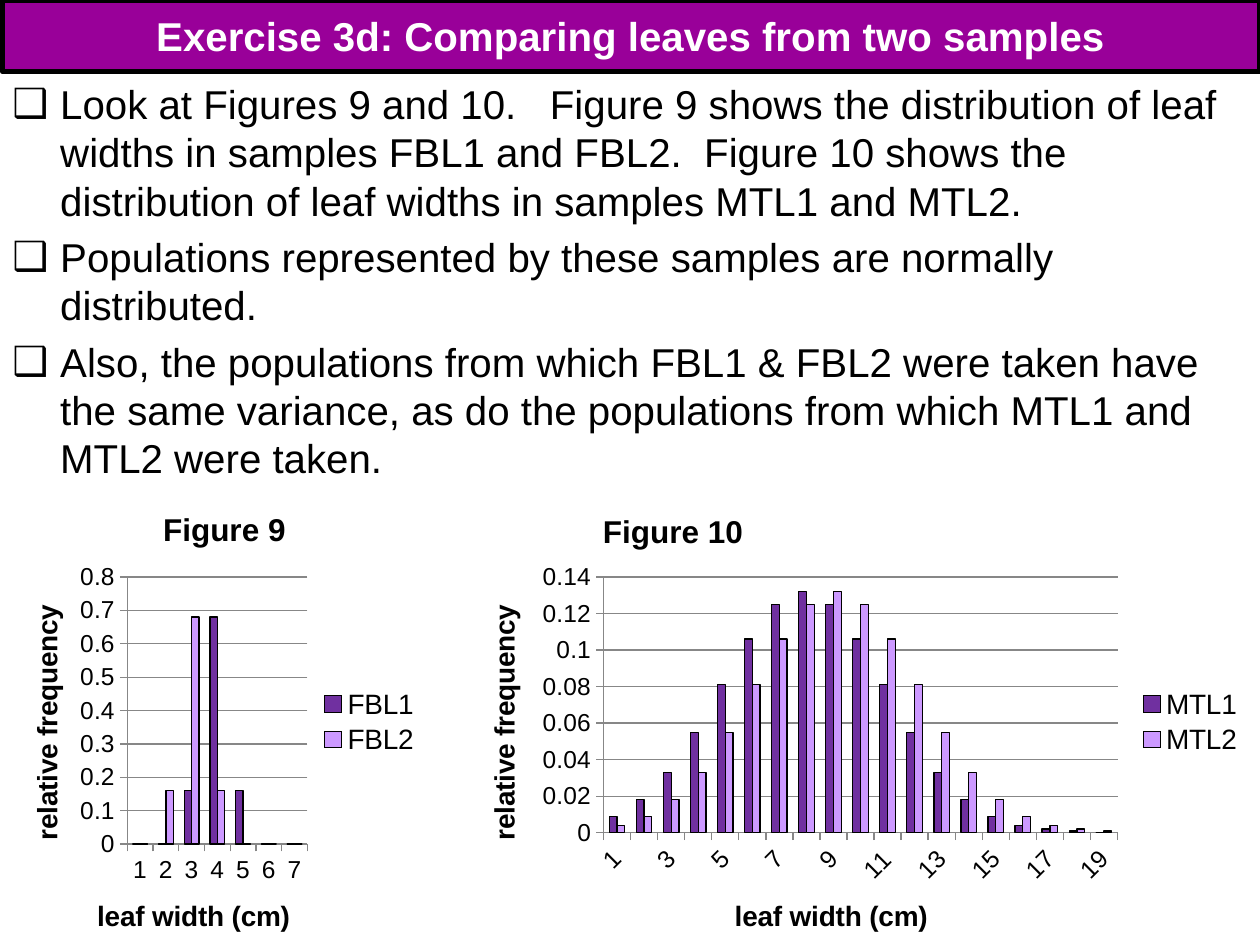
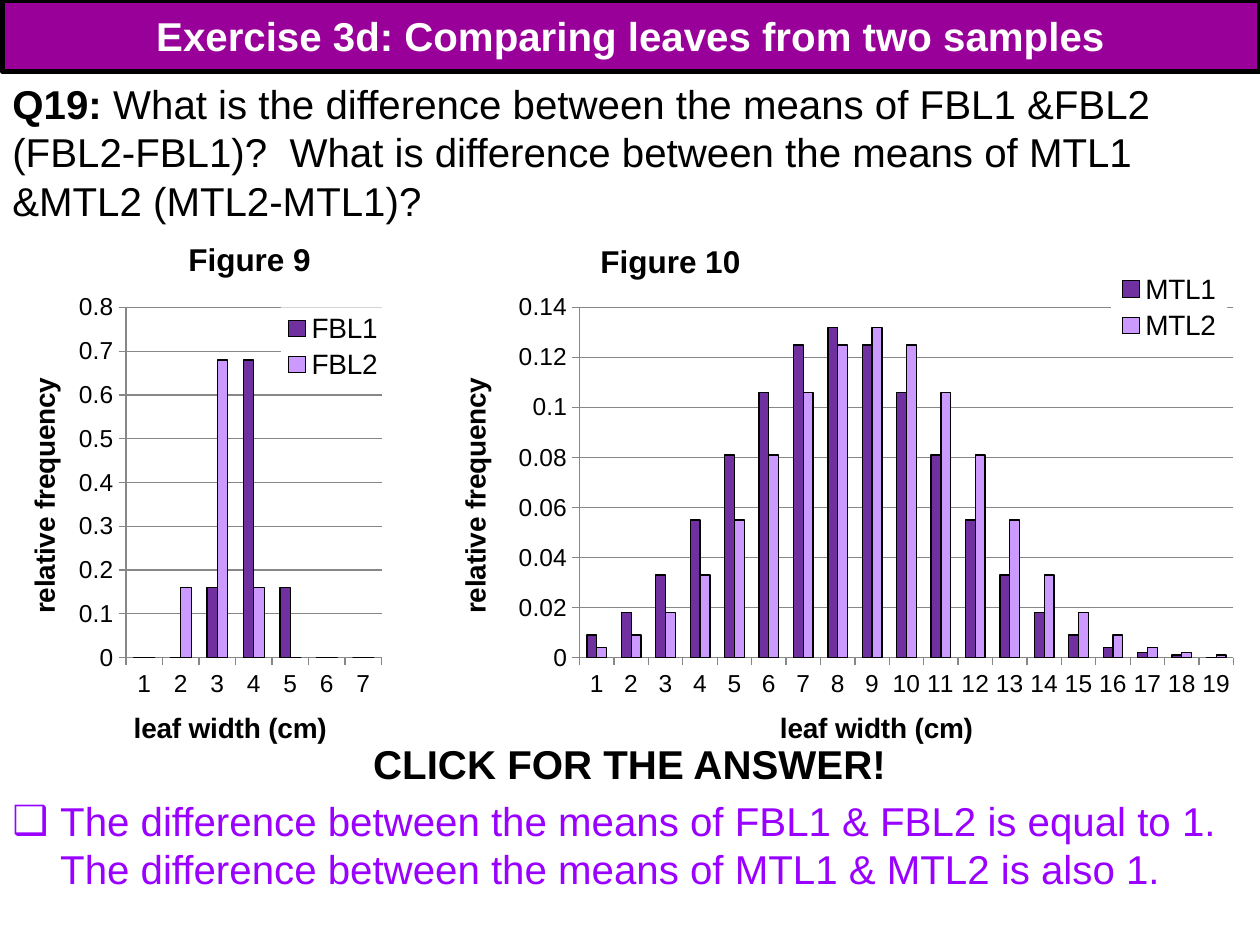
from dataclasses import dataclass
from typing import Optional

import lxml.etree
import pptx
import pptx.chart.data
import pptx.dml.color
import pptx.enum.chart
import pptx.enum.text
import pptx.oxml.ns
import pptx.util
from pptx.util import Inches

FONT = "Arial"
BLACK = "000000"
WHITE = "FFFFFF"
BAND = "990099"
ANSWER = "9900FF"
GRID = "878787"
SERIES_COLOURS = ("7030A0", "CC99FF")
TITLE = "Exercise 3d: Comparing leaves from two samples"
BODY_SIZE = 23
LINE_PITCH = 27.6
PARAGRAPH_GAP = 4.6
BULLET_INDENT = 0.38

FBL1 = [0, 0, 0.16, 0.68, 0.16, 0, 0]
MTL1 = [0.009, 0.018, 0.033, 0.055, 0.081, 0.106, 0.125, 0.132, 0.125, 0.106,
        0.081, 0.055, 0.033, 0.018, 0.009, 0.004, 0.002, 0.001, 0]


@dataclass(frozen=True)
class Box:
    left: float
    top: float
    width: float = 0
    height: float = 0


@dataclass(frozen=True)
class Distribution:
    title: str
    series: dict[str, list[float]]
    maximum: float
    step: float


@dataclass(frozen=True)
class Figure:
    distribution: Distribution
    frame: Box
    plot: Box
    title: Box
    width_title: Box
    frequency_title: Box
    legend: Box
    label_skip: int = 1
    label_angle: int = 0


@dataclass(frozen=True)
class Run:
    text: str
    bold: bool = False
    colour: str = BLACK


@dataclass(frozen=True)
class Paragraph:
    runs: tuple[Run, ...]
    bullet: bool = False
    centred: bool = False


FIGURE_9 = Distribution("Figure 9", {"FBL1": FBL1, "FBL2": FBL1[1:] + [0]}, 0.8, 0.1)
FIGURE_10 = Distribution("Figure 10", {"MTL1": MTL1, "MTL2": [0.004] + MTL1[:-1]}, 0.14, 0.02)

INTRODUCTION_FIGURES = (
    Figure(FIGURE_9, Box(0.02, 3.83, 3.42, 3.8), Box(1.01, 4.58, 1.43, 2.12),
           Box(1.25, 3.99), Box(0.73, 7.09), Box(0.19, 4.76), Box(2.53, 5.43, 0.8, 0.6)),
    Figure(FIGURE_10, Box(3.64, 3.83, 6.33, 3.8), Box(4.79, 4.58, 4.08, 2.03),
           Box(4.74, 4.01), Box(5.79, 7.09), Box(3.82, 4.76), Box(9.02, 5.43, 0.85, 0.6),
           label_skip=2, label_angle=-45),
)
QUESTION_FIGURES = (
    Figure(FIGURE_9, Box(-0.01, 1.67, 4.05, 4.5), Box(1, 2.44, 2.03, 2.78),
           Box(1.45, 1.85), Box(1.02, 5.6), Box(0.17, 2.96), Box(2.23, 2.44, 0.83, 0.62)),
    Figure(FIGURE_10, Box(3.41, 1.67, 7.5, 4.5), Box(4.6, 2.44, 5.19, 2.78),
           Box(4.72, 1.87), Box(6.15, 5.6), Box(3.59, 2.96), Box(8.82, 2.13, 0.92, 0.62)),
)

INTRODUCTION = tuple(Paragraph((Run(text),), bullet=True) for text in (
    "Look at Figures 9 and 10.   Figure 9 shows the distribution of leaf widths in samples "
    "FBL1 and FBL2.  Figure 10 shows the distribution of leaf widths in samples MTL1 and MTL2.",
    "Populations represented by these samples are normally distributed.",
    "Also, the populations from which FBL1 & FBL2 were taken have the same variance, "
    "as do the populations from which MTL1 and MTL2 were taken.",
))
QUESTION = (Paragraph((
    Run("Q19:", bold=True),
    Run(" What is the difference between the means of FBL1 &FBL2 (FBL2-FBL1)?  "
        "What is difference between the means of MTL1 &MTL2 (MTL2-MTL1)?"),
)),)
REPLY = (
    Paragraph((Run("CLICK FOR THE ANSWER!", bold=True),), centred=True),
    Paragraph((Run("The difference between the means of FBL1 & FBL2 is equal to 1.  "
                   "The difference between the means of MTL1 & MTL2 is also 1.",
                   colour=ANSWER),), bullet=True),
)


def colour_of(value: str) -> pptx.dml.color.RGBColor:
    return pptx.dml.color.RGBColor.from_string(value)


def style_font(font, size: float, bold: bool = False, colour: str = BLACK) -> None:
    font.name = FONT
    font.size = pptx.util.Pt(size)
    font.bold = bold
    font.color.rgb = colour_of(colour)


def style_line(line, colour: str, width: float) -> None:
    line.color.rgb = colour_of(colour)
    line.width = pptx.util.Pt(width)


def add_child(parent, tag: str, **attributes: str):
    return lxml.etree.SubElement(parent, pptx.oxml.ns.qn(tag), **attributes)


def add_title(slide) -> None:
    title = slide.shapes.title
    title.left, title.top = Inches(0.02), Inches(0)
    title.width, title.height = Inches(9.98), Inches(0.57)
    title.fill.solid()
    title.fill.fore_color.rgb = colour_of(BAND)
    style_line(title.line, BLACK, 3)
    title.text_frame.vertical_anchor = pptx.enum.text.MSO_ANCHOR.MIDDLE
    paragraph = title.text_frame.paragraphs[0]
    paragraph.alignment = pptx.enum.text.PP_ALIGN.CENTER
    run = paragraph.add_run()
    run.text = TITLE
    style_font(run.font, BODY_SIZE, True, WHITE)


def add_text(slide, box: Box, contents: tuple[Paragraph, ...]) -> None:
    shape = slide.shapes.add_textbox(
        Inches(box.left), Inches(box.top), Inches(box.width), Inches(box.height))
    frame = shape.text_frame
    frame.word_wrap = True
    for index, content in enumerate(contents):
        paragraph = frame.add_paragraph() if index else frame.paragraphs[0]
        paragraph.line_spacing = pptx.util.Pt(LINE_PITCH)
        if index:
            paragraph.space_before = pptx.util.Pt(PARAGRAPH_GAP)
        if content.centred:
            paragraph.alignment = pptx.enum.text.PP_ALIGN.CENTER
        if content.bullet:
            properties = paragraph._p.get_or_add_pPr()
            properties.set("marL", str(Inches(BULLET_INDENT)))
            properties.set("indent", str(-Inches(BULLET_INDENT)))
            add_child(properties, "a:buFont", typeface=FONT)
            add_child(properties, "a:buChar", char="❑")
        for part in content.runs:
            run = paragraph.add_run()
            run.text = part.text
            style_font(run.font, BODY_SIZE, part.bold, part.colour)


def place_part(element, box: Box, frame: Box, inner: bool = False) -> None:
    for previous in element.findall(pptx.oxml.ns.qn("c:layout")):
        element.remove(previous)
    layout = lxml.etree.Element(pptx.oxml.ns.qn("c:layout"))
    manual = add_child(layout, "c:manualLayout")
    if inner:
        add_child(manual, "c:layoutTarget", val="inner")
    add_child(manual, "c:xMode", val="edge")
    add_child(manual, "c:yMode", val="edge")
    add_child(manual, "c:x", val=f"{(box.left - frame.left) / frame.width:.4f}")
    add_child(manual, "c:y", val=f"{(box.top - frame.top) / frame.height:.4f}")
    if box.width:
        add_child(manual, "c:w", val=f"{box.width / frame.width:.4f}")
        add_child(manual, "c:h", val=f"{box.height / frame.height:.4f}")
    overlay = element.find(pptx.oxml.ns.qn("c:overlay"))
    if inner:
        element.insert(0, layout)
    elif overlay is None:
        element.append(layout)
    else:
        overlay.addprevious(layout)


def add_chart_title(title, text: str, size: float, box: Box, frame: Box) -> None:
    run = title.text_frame.paragraphs[0].add_run()
    run.text = text
    style_font(run.font, size, True)
    place_part(title._element, box, frame)


def style_axis(axis, text: str, box: Box, frame: Box) -> None:
    axis.has_title = True
    add_chart_title(axis.axis_title, text, 16, box, frame)
    axis.major_tick_mark = pptx.enum.chart.XL_TICK_MARK.OUTSIDE
    axis.minor_tick_mark = pptx.enum.chart.XL_TICK_MARK.NONE
    style_font(axis.tick_labels.font, 14)
    style_line(axis.format.line, GRID, 0.75)


def add_legend(chart, box: Box, frame: Box) -> None:
    chart.has_legend = True
    legend = chart.legend
    legend.position = pptx.enum.chart.XL_LEGEND_POSITION.RIGHT
    legend.include_in_layout = False
    style_font(legend.font, 16)
    place_part(legend._element, box, frame)
    properties = lxml.etree.Element(pptx.oxml.ns.qn("c:spPr"))
    fill = add_child(properties, "a:solidFill")
    add_child(fill, "a:srgbClr", val=WHITE)
    legend._element.find(pptx.oxml.ns.qn("c:overlay")).addnext(properties)


def add_figure(slide, figure: Figure) -> None:
    distribution, frame = figure.distribution, figure.frame
    data = pptx.chart.data.CategoryChartData(number_format="General")
    count = len(next(iter(distribution.series.values())))
    data.categories = [str(width) for width in range(1, count + 1)]
    for name, values in distribution.series.items():
        data.add_series(name, values)
    chart = slide.shapes.add_chart(
        pptx.enum.chart.XL_CHART_TYPE.COLUMN_CLUSTERED, Inches(frame.left), Inches(frame.top),
        Inches(frame.width), Inches(frame.height), data).chart
    style_font(chart.font, 10)

    background = lxml.etree.Element(pptx.oxml.ns.qn("c:spPr"))
    add_child(background, "a:noFill")
    add_child(add_child(background, "a:ln"), "a:noFill")
    chart_element = chart._chartSpace.find(pptx.oxml.ns.qn("c:chart"))
    chart_element.addnext(background)

    chart.has_title = True
    add_chart_title(chart.chart_title, distribution.title, 18, figure.title, frame)
    place_part(chart_element.find(pptx.oxml.ns.qn("c:plotArea")), figure.plot, frame, inner=True)
    add_legend(chart, figure.legend, frame)

    widths, frequencies = chart.category_axis, chart.value_axis
    style_axis(widths, "leaf width (cm)", figure.width_title, frame)
    style_axis(frequencies, "relative frequency", figure.frequency_title, frame)
    frequencies.minimum_scale = 0
    frequencies.maximum_scale = distribution.maximum
    frequencies.major_unit = distribution.step
    frequencies.has_major_gridlines = True
    style_line(frequencies.major_gridlines.format.line, GRID, 0.75)
    label_body = widths._element.find(pptx.oxml.ns.qn("c:txPr")).find(pptx.oxml.ns.qn("a:bodyPr"))
    label_body.set("rot", str(figure.label_angle * 60000))
    skip = lxml.etree.Element(pptx.oxml.ns.qn("c:tickLblSkip"), val=str(figure.label_skip))
    widths._element.find(pptx.oxml.ns.qn("c:noMultiLvlLbl")).addprevious(skip)

    plot = chart.plots[0]
    plot.gap_width = 150
    plot.overlap = 0
    plot.vary_by_categories = False
    for series, colour in zip(plot.series, SERIES_COLOURS):
        series.format.fill.solid()
        series.format.fill.fore_color.rgb = colour_of(colour)
        style_line(series.format.line, BLACK, 0.75)


def add_exercise_slide(presentation, text: tuple[Paragraph, ...], text_height: float,
                       figures: tuple[Figure, ...],
                       reply: Optional[tuple[Paragraph, ...]] = None) -> None:
    slide = presentation.slides.add_slide(presentation.slide_layouts[5])
    add_title(slide)
    add_text(slide, Box(0, 0.58, 10, text_height), text)
    for figure in figures:
        add_figure(slide, figure)
    if reply:
        add_text(slide, Box(0, 5.82, 10, 1.68), reply)


def main() -> None:
    presentation = pptx.Presentation()
    presentation.slide_width, presentation.slide_height = Inches(10), Inches(7.5)
    add_exercise_slide(presentation, INTRODUCTION, 3.3, INTRODUCTION_FIGURES)
    add_exercise_slide(presentation, QUESTION, 1.3, QUESTION_FIGURES, REPLY)
    presentation.save("out.pptx")


if __name__ == "__main__":
    main()
